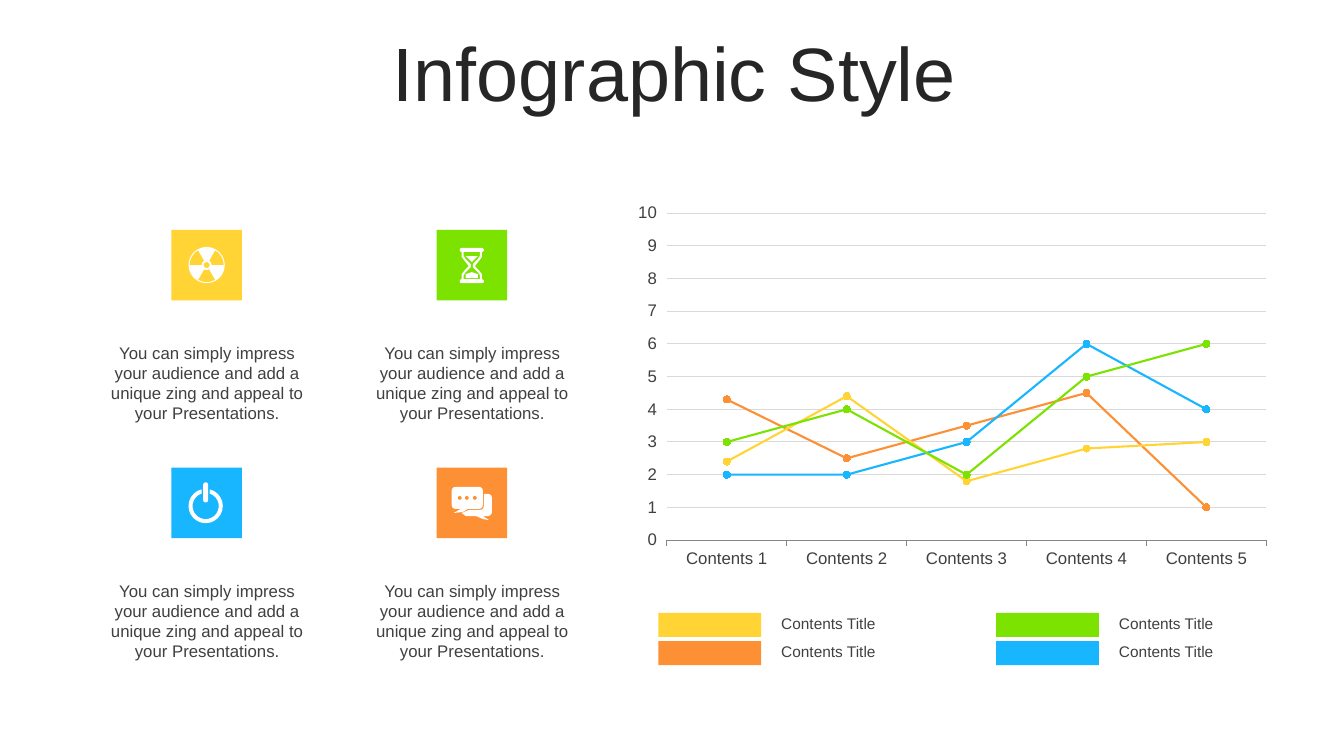
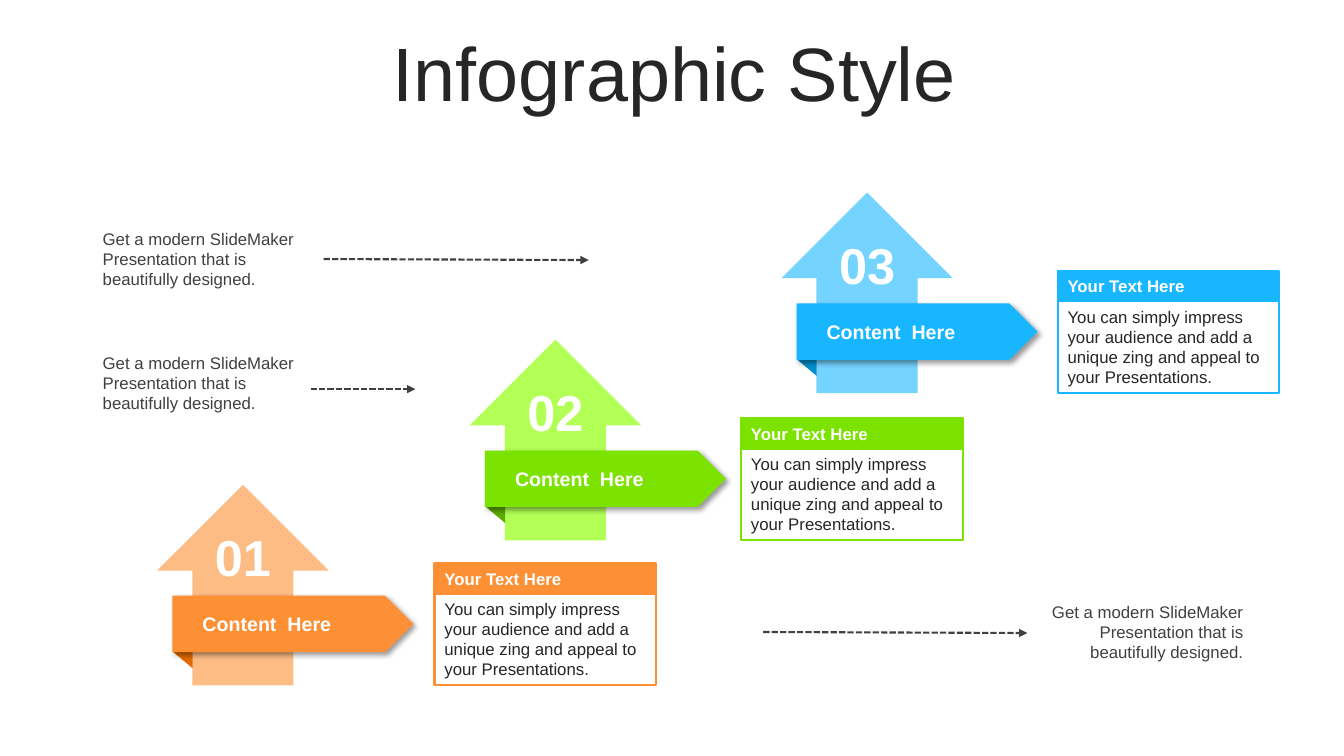
"""Build two infographic slides: a line chart with icons, and three rising steps."""
from dataclasses import dataclass
from math import cos, radians, sin

from lxml import etree
from pptx import Presentation
from pptx.chart.data import CategoryChartData
from pptx.dml.color import RGBColor
from pptx.enum.chart import XL_CHART_TYPE, XL_MARKER_STYLE, XL_TICK_MARK
from pptx.enum.dml import MSO_LINE
from pptx.enum.shapes import MSO_CONNECTOR, MSO_SHAPE
from pptx.enum.text import MSO_ANCHOR, PP_ALIGN
from pptx.oxml.ns import qn
from pptx.util import Pt

PX = 9144
RECT, UP_ARROW, PLATE = MSO_SHAPE.RECTANGLE, MSO_SHAPE.UP_ARROW, MSO_SHAPE.PENTAGON
LEFT, CENTER, RIGHT = PP_ALIGN.LEFT, PP_ALIGN.CENTER, PP_ALIGN.RIGHT
TOP, MIDDLE = MSO_ANCHOR.TOP, MSO_ANCHOR.MIDDLE
LINE_CHART = XL_CHART_TYPE.LINE_MARKERS
CIRCLE = XL_MARKER_STYLE.CIRCLE
TICK_OUT = XL_TICK_MARK.OUTSIDE
STRAIGHT = MSO_CONNECTOR.STRAIGHT
DASH = MSO_LINE.SQUARE_DOT


@dataclass(frozen=True)
class Hue:
    """One accent colour with its light and dark companions."""
    main: RGBColor
    light: RGBColor = None
    dark: RGBColor = None


def rgb(code):
    """Return the colour for a hex code."""
    return RGBColor.from_string(code)


@dataclass(frozen=True)
class Theme:
    """Colours, font and type sizes shared by the slides."""
    font: str = "Arial"
    orange: Hue = Hue(rgb("FD9034"), rgb("FEBC85"), rgb("E36902"))
    green: Hue = Hue(rgb("7CE200"), rgb("B2FF55"), rgb("5DAA00"))
    blue: Hue = Hue(rgb("17B6FF"), rgb("74D3FF"), rgb("008FD0"))
    yellow: Hue = Hue(rgb("FFD434"))
    white: RGBColor = rgb("FFFFFF")
    ink: RGBColor = rgb("262626")
    text: RGBColor = rgb("404040")
    axis: RGBColor = rgb("868686")
    grid: RGBColor = rgb("D9D9D9")
    title_size: int = 54
    number_size: int = 36
    tab_size: int = 14
    body_size: int = 12
    legend_size: int = 11


THEME = Theme()
PITCH = ("You can simply impress your audience and add a unique zing "
         "and appeal to your Presentations.")
NOTE = "Get a modern SlideMaker Presentation that is beautifully designed."


def px(*lengths):
    """Turn px lengths into EMU."""
    return [round(length * PX) for length in lengths]


def arc(x, y, radius, start, end):
    """Return points along an arc, in degrees clockwise from the right."""
    count = max(2, abs(end - start) // (15 if radius > 10 else 30))
    angles = [radians(start + (end - start) * i / count) for i in range(count + 1)]
    return [(x + radius * cos(a), y + radius * sin(a)) for a in angles]


def mirrored(points):
    """Close a right-hand outline with its reflection in the tile's middle."""
    return points + [(70 - x, y) for x, y in reversed(points)]


def radiation_icon():
    """Return the contours of a radiation sign."""
    blades = [arc(35, 35, 17, a, a + 60) + arc(35, 35, 5, a + 60, a)
              for a in (60, 180, 300)]
    return [arc(35, 35, 18, 0, 360), arc(35, 35, 3, 0, 360), *blades]


def hourglass_icon():
    """Return the contours of an hourglass."""
    frame = (arc(45, 20, 2, -90, 90)
             + [(45, 27), (42, 31), (38, 36), (42, 40), (45, 44)]
             + arc(45, 51, 2, -90, 90))
    glass = [(43, 22), (43, 26), (41, 29), (36, 34), (36, 37), (41, 42), (43, 45), (43, 49)]
    sand = [[(41, 26), (35, 32)], [(35, 42), (41, 44), (41, 48)]]
    return [mirrored(half) for half in (frame, glass, *sand)]


def power_icon():
    """Return the contours of a power sign."""
    ring = arc(34, 38, 17, -76, 256) + arc(34, 38, 13, 252, -72)
    bar = arc(34, 17, 2.5, 180, 360) + arc(34, 32, 2.5, 0, 180)
    return [ring, bar]


def chat_icon():
    """Return the contours of two speech bubbles."""
    front = (arc(19, 23, 4, 180, 270) + arc(42, 23, 4, 270, 360)
             + arc(42, 37, 4, 0, 90) + [(31, 41), (26, 44), (17, 45), (24, 41)]
             + arc(19, 37, 4, 90, 180))
    back = ([(47, 26)] + arc(51, 30, 4, -90, 0) + arc(51, 44, 4, 0, 90)
            + [(46, 48), (52, 52), (46, 51), (39, 48), (29, 48), (25, 45), (32, 42)]
            + arc(43, 38, 4, 90, 0))
    return [front, back, *(arc(x, 30, 2, 0, 360) for x in (23, 30, 38))]


def write(shape, text, size, color, bold=False, align=LEFT, anchor=TOP):
    """Put one styled paragraph into a shape and return it."""
    frame = shape.text_frame
    frame.word_wrap = True
    frame.vertical_anchor = anchor
    para = frame.paragraphs[0]
    para.text = text
    para.alignment = align
    font = para.font
    font.name, font.size, font.bold = THEME.font, Pt(size), bold
    font.color.rgb = color
    return para


def add_text(page, at, text, size, color, **style):
    """Add a text box and return its paragraph."""
    return write(page.shapes.add_textbox(*px(*at)), text, size, color, **style)


def paint(shape, fill=None, line=None):
    """Set fill and outline, and drop the shadow."""
    shape.shadow.inherit = False
    if fill is None:
        shape.fill.background()
    else:
        shape.fill.solid()
        shape.fill.fore_color.rgb = fill
    if line is None:
        shape.line.fill.background()
    else:
        shape.line.color.rgb = line
        shape.line.width = Pt(1.5)
    return shape


def add_block(page, kind, at, fill=None, line=None):
    """Add a preset shape."""
    return paint(page.shapes.add_shape(kind, *px(*at)), fill, line)


def add_outline(page, left, top, contours, fill):
    """Add a freeform whose inner contours are holes."""
    placed = [[px(left + x, top + y) for x, y in points] for points in contours]
    builder = page.shapes.build_freeform(*placed[0][0], scale=1.0)
    builder.add_line_segments(placed[0][1:], close=True)
    for points in placed[1:]:
        builder.move_to(*points[0])
        builder.add_line_segments(points[1:], close=True)
    return paint(builder.convert_to_shape(), fill)


def add_shadow(shape):
    """Give a shape a soft shadow to the lower right."""
    effects = shape.element.spPr.find(qn("a:effectLst"))
    shadow = etree.SubElement(effects, qn("a:outerShdw"), blurRad="50800",
                              dist="38100", dir="2700000", algn="tl", rotWithShape="0")
    color = etree.SubElement(shadow, qn("a:srgbClr"), val="000000")
    etree.SubElement(color, qn("a:alpha"), val="40000")


def add_dashed_arrow(page, *ends):
    """Add a dashed connector with an arrowhead at its end."""
    arrow = page.shapes.add_connector(STRAIGHT, *px(*ends))
    arrow.line.color.rgb = THEME.text
    arrow.line.width = Pt(1.5)
    arrow.line.dash_style = DASH
    properties = arrow.element.spPr
    etree.SubElement(properties.find(qn("a:ln")), qn("a:tailEnd"), type="triangle")
    etree.SubElement(properties, qn("a:effectLst"))


def add_page(deck):
    """Add a blank slide with the shared title."""
    page = deck.slides.add_slide(deck.slide_layouts[6])
    para = add_text(page, (36, 37, 1266, 79), "Infographic Style", THEME.title_size,
                    THEME.ink, align=CENTER, anchor=MIDDLE)
    para.line_spacing = 0.9
    para.space_before = Pt(10)
    return page


def add_feature(page, left, top, hue, icon):
    """Add an icon tile with its text below."""
    add_block(page, RECT, (left, top, 70, 70), hue.main)
    add_outline(page, left, top, icon, THEME.white)
    add_text(page, (left - 73, top + 107, 217, 91), PITCH, THEME.body_size,
             THEME.text, align=CENTER)


def add_legend_entry(page, left, top, hue):
    """Add a colour swatch with its label."""
    add_block(page, RECT, (left, top, 102, 24), hue.main)
    add_text(page, (left + 112, top - 4, 136, 29), "Contents Title",
             THEME.legend_size, THEME.text)


def add_line_chart(page, at, categories, series):
    """Add the line chart, with one (hue, values) pair per series."""
    data = CategoryChartData()
    data.categories = categories
    for number, (_, values) in enumerate(series, 1):
        data.add_series(f"Series {number}", values)
    chart = page.shapes.add_chart(LINE_CHART, *px(*at), data).chart
    chart.has_legend = chart.has_title = False
    chart.font.name, chart.font.size = THEME.font, Pt(THEME.body_size)
    chart.font.color.rgb = THEME.text
    plot = chart.plots[0]
    plot.vary_by_categories = False
    for line, (hue, _) in zip(plot.series, series):
        line.smooth = False
        line.format.line.color.rgb = hue.main
        line.format.line.width = Pt(1.5)
        marker = line.marker
        marker.style, marker.size = CIRCLE, 5
        marker.format.fill.solid()
        marker.format.fill.fore_color.rgb = hue.main
        marker.format.line.color.rgb = hue.main
        marker.format.line.width = Pt(0.75)
    scale = chart.value_axis
    scale.minimum_scale, scale.maximum_scale, scale.major_unit = 0, 10, 1
    scale.format.line.fill.background()
    scale.major_gridlines.format.line.color.rgb = THEME.grid
    scale.major_gridlines.format.line.width = Pt(0.75)
    chart.category_axis.format.line.color.rgb = THEME.axis
    for axis in (scale, chart.category_axis):
        axis.major_tick_mark = TICK_OUT


def add_step(page, number, left, top, hue):
    """Add a numbered up arrow wrapped by a content ribbon."""
    arrow = add_block(page, UP_ARROW, (left, top, 170, 199), hue.light)
    arrow.adjustments[0] = 0.59
    add_outline(page, left, top, [[(16, 166), (35, 166), (35, 182)]], hue.dark)
    add_shadow(add_block(page, PLATE, (left + 15, top + 110, 239, 56), hue.main))
    add_text(page, (left + 35, top + 121, 170, 34), "Content  Here", THEME.tab_size,
             THEME.white, bold=True, anchor=MIDDLE)
    add_text(page, (left + 40, top + 36, 90, 71), f"{number:02}", THEME.number_size,
             THEME.white, bold=True, align=CENTER)


def add_card(page, left, top, hue):
    """Add an outlined text card with a filled heading."""
    body = add_block(page, RECT, (left, top + 30, 220, 91), line=hue.main)
    write(body, PITCH, THEME.body_size, THEME.ink)
    heading = add_block(page, RECT, (left, top, 220, 30), hue.main, hue.main)
    write(heading, "Your Text Here", THEME.body_size, THEME.white, bold=True)


def build_chart_page(deck):
    """Build the slide with four features and a line chart."""
    page = add_page(deck)
    orange, green, blue, yellow = THEME.orange, THEME.green, THEME.blue, THEME.yellow
    add_line_chart(page, (620, 195, 649, 376), [f"Contents {n}" for n in range(1, 6)], [
        (orange, (4.3, 2.5, 3.5, 4.5, 1)),
        (yellow, (2.4, 4.4, 1.8, 2.8, 3)),
        (blue, (2, 2, 3, 6, 4)),
        (green, (3, 4, 2, 5, 6)),
    ])
    for i, hue in enumerate((yellow, green, orange, blue)):
        add_legend_entry(page, 653 + i % 2 * 335, 608 + i // 2 * 28, hue)
    features = ((yellow, radiation_icon()), (green, hourglass_icon()),
                (blue, power_icon()), (orange, chat_icon()))
    for i, (hue, icon) in enumerate(features):
        add_feature(page, 170 + i % 2 * 263, 228 + i // 2 * 236, hue, icon)


def build_steps_page(deck):
    """Build the slide with three rising steps."""
    page = add_page(deck)
    steps = ((156, 481, 431, THEME.orange), (466, 337, 735, THEME.green),
             (775, 191, 1049, THEME.blue))
    for number, (left, top, card_left, hue) in enumerate(steps, 1):
        add_step(page, number, left, top, hue)
        add_card(page, card_left, top + 78, hue)
    for left, top, align in ((92, 222, LEFT), (92, 345, LEFT), (1014, 592, RIGHT)):
        add_text(page, (left, top, 229, 71), NOTE, THEME.body_size, THEME.text, align=align)
    for ends in ((321, 257, 584, 258), (308, 386, 412, 386), (757, 627, 1019, 628)):
        add_dashed_arrow(page, *ends)


def main():
    """Build and save the deck."""
    deck = Presentation()
    deck.slide_width, deck.slide_height = px(1333, 750)
    build_chart_page(deck)
    build_steps_page(deck)
    deck.save("out.pptx")


if __name__ == "__main__":
    main()
